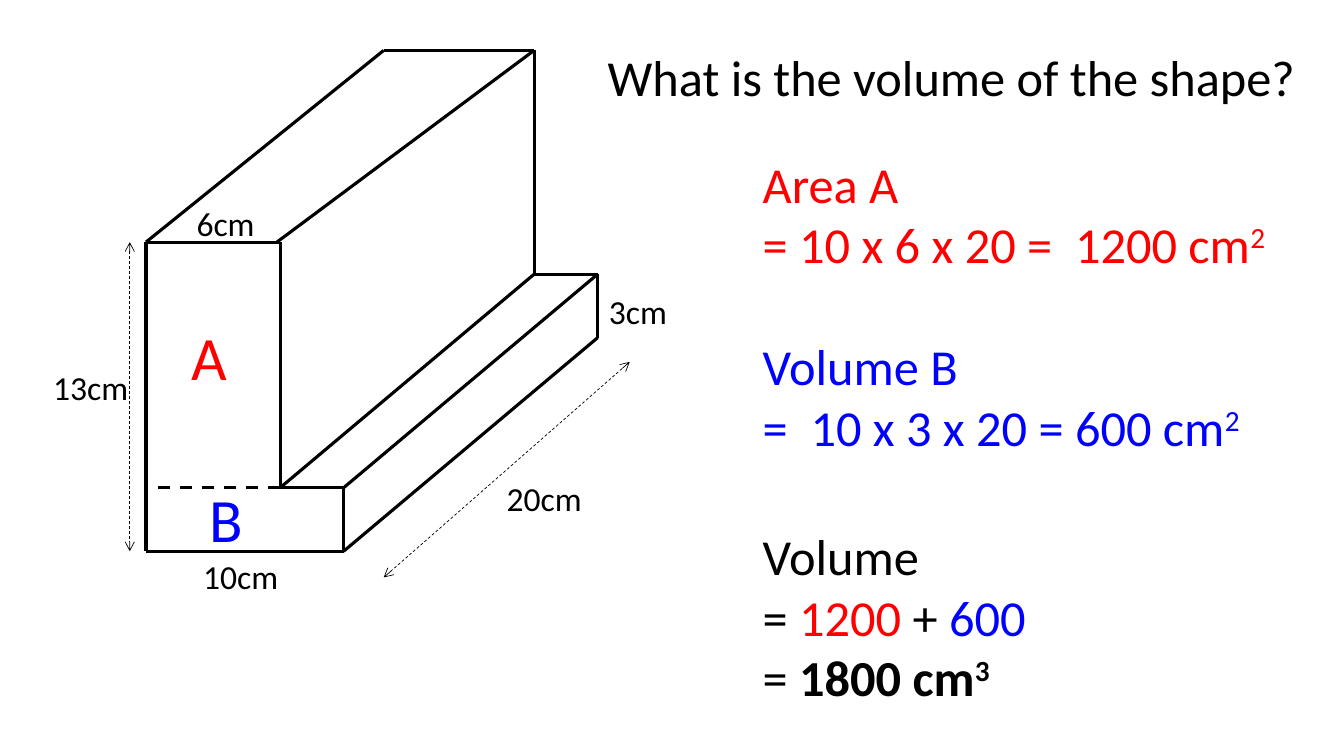
from lxml import etree
from pptx import Presentation, util as u
from pptx.dml.color import RGBColor
from pptx.enum import dml, shapes, text
from pptx.oxml.ns import qn

BLACK = RGBColor(0x00, 0x00, 0x00)
RED = RGBColor(0xFF, 0x00, 0x00)
BLUE = RGBColor(0x00, 0x00, 0xFF)
FONT = "Calibri"


def add_span(para, words, size, color, bold=False, raised=False):
    span = para.add_run()
    span.text = words
    span.font.name = FONT
    span.font.size = u.Pt(size)
    span.font.color.rgb = color
    span.font.bold = bold
    if raised:
        span.font._element.set("baseline", "30000")


def add_box(page, left, top, width, height):
    box = page.shapes.add_textbox(u.Cm(left), u.Cm(top), u.Cm(width), u.Cm(height))
    box.text_frame.word_wrap = True
    box.text_frame.auto_size = text.MSO_AUTO_SIZE.SHAPE_TO_FIT_TEXT
    return box


def add_label(page, words, left, top, width, height, size=24, color=BLACK):
    para = add_box(page, left, top, width, height).text_frame.paragraphs[0]
    para.alignment = text.PP_ALIGN.CENTER
    add_span(para, words, size, color)


def add_line(page, start, end, weight=2.25, dashed=False, arrows=False):
    line = page.shapes.add_connector(
        shapes.MSO_CONNECTOR.STRAIGHT, *(u.Cm(value) for value in (*start, *end)))
    line.line.color.rgb = BLACK
    line.line.width = u.Pt(weight)
    if dashed:
        line.line.dash_style = dml.MSO_LINE.DASH
    if arrows:
        outline = line.line._get_or_add_ln()
        for side in ("headEnd", "tailEnd"):
            etree.SubElement(outline, qn(f"a:{side}"), type="arrow")
    etree.SubElement(line._element.spPr, qn("a:effectLst"))


def draw_prism(page, left, top):
    """L-shaped prism with its measurements, relative to its top left corner."""
    def at(x, y):
        return left + x, top + y

    upright, foot = 3.38, 4.98          # right edges of parts A and B
    roof, step, base = 4.83, 11.02, 12.62
    depth_x, depth_y = 6.4, -5.38
    back_left, back_right, back_step = 5.99, upright + depth_x, step + depth_y

    # Front face
    front = [(upright, roof), (0, roof), (0, base), (foot, base),
             (foot, step), (upright, step), (upright, roof)]
    # Back edges, left to right
    back = [(back_left, 0), (back_right, 0), (back_right, back_step),
            (foot + depth_x, back_step), (foot + depth_x, base + depth_y)]
    for outline in (front, back):
        for start, end in zip(outline, outline[1:]):
            add_line(page, at(*start), at(*end))

    # Edges running from front to back
    for start, end in [((0, roof), back[0]), ((3.3, roof), back[1]),
                       ((upright, step), back[2]), ((foot, step), back[3]),
                       ((foot, base), back[4])]:
        add_line(page, at(*start), at(*end))

    # Divider between A and B
    add_line(page, at(upright, step), at(0, step), dashed=True)

    # Measuring arrows
    for start, end in [((-0.41, roof), (-0.41, base)), ((5.99, 13.28), (12.19, 7.85))]:
        add_line(page, at(*start), at(*end), 0.5, dashed=True, arrows=True)

    # Lengths and part names
    for words, x, y in [("10cm", 0.58, base), ("3cm", 10.59, 5.94), ("13cm", -3.2, 7.85),
                        ("6cm", 0.2, 3.73), ("20cm", 8.23, 10.64)]:
        add_label(page, words, *at(x, y), 3.61, 1.27)
    for words, x, y, color in [("A", 0.48, 6.65, RED), ("B", 0.91, 10.72, BLUE)]:
        add_label(page, words, *at(x, y), 2.21, 2.13, 44, color)


def write_title(page, left, top, width, height):
    title = page.shapes.title
    title.left, title.top = u.Cm(left), u.Cm(top)
    title.width, title.height = u.Cm(width), u.Cm(height)
    frame = title.text_frame
    frame.word_wrap = True
    frame.auto_size = text.MSO_AUTO_SIZE.NONE
    frame.vertical_anchor = text.MSO_ANCHOR.TOP
    para = frame.paragraphs[0]
    para.alignment = text.PP_ALIGN.LEFT
    add_span(para, "What is the volume of the shape?", 36, BLACK)


def write_working(page, lines, left, top, width, height, gap_before=None):
    """Lines of (words, colour, bold, raised) spans; one line may follow a gap."""
    frame = add_box(page, left, top, width, height).text_frame
    for index, spans in enumerate(lines):
        para = frame.paragraphs[0] if index == 0 else frame.add_paragraph()
        if index == gap_before:
            para.space_before = u.Pt(44)
        for words, color, *style in spans:
            add_span(para, words, 36, color, *style)


def main():
    deck = Presentation()
    deck.slide_width, deck.slide_height = u.Cm(33.87), u.Cm(19.05)
    page = deck.slides.add_slide(deck.slide_layouts.get_by_name("Title Only"))

    write_title(page, 15.06, 1.04, 18.39, 1.8)
    draw_prism(page, 3.68, 1.27)

    # Volumes of the two parts
    write_working(page, [
        [("Area A", RED)],
        [("= 10 x 6 x 20 =  1200 cm", RED), ("2", RED, False, True)],
        [("Volume B", BLUE)],
        [("=  10 x 3 x 20 = 600 cm", BLUE), ("2", BLUE, False, True)],
    ], 18.97, 3.73, 13.64, 7.95, gap_before=2)

    # Total volume
    write_working(page, [
        [("Volume", BLACK)],
        [("= ", BLACK), ("1200", RED), (" + ", BLACK), ("600", BLUE)],
        [("= ", BLACK), ("1800 cm", BLACK, True), ("3", BLACK, True, True)],
    ], 18.97, 13.11, 7.87, 4.88)

    deck.save("out.pptx")


if __name__ == "__main__":
    main()
